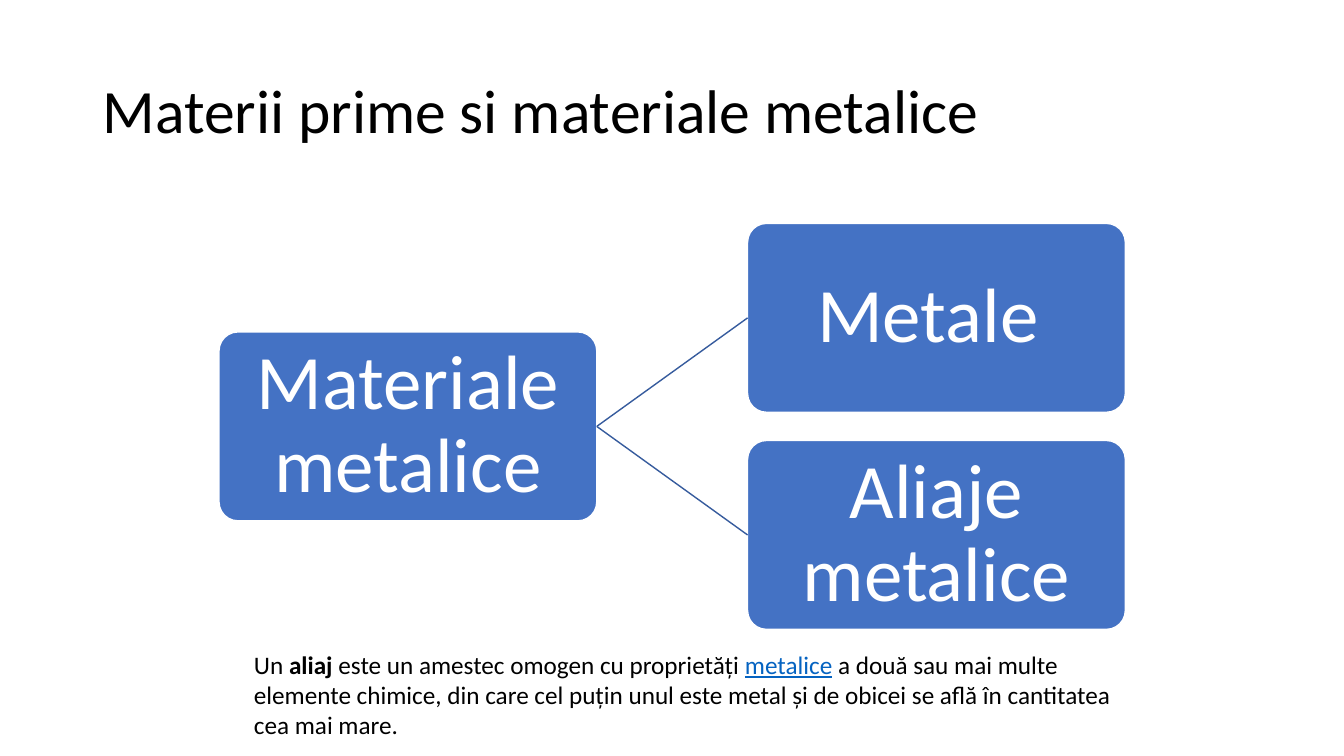
import dataclasses

import lxml.etree
import pptx
import pptx.dml.color
import pptx.enum.shapes
import pptx.enum.text
import pptx.oxml.ns
import pptx.util

Cm = pptx.util.Cm
Pt = pptx.util.Pt
ANCHOR = pptx.enum.text.MSO_ANCHOR
ALIGN = pptx.enum.text.PP_ALIGN

FONT = "Calibri"
COLORS = {
    "text": "000000",
    "box": "4472C4",
    "box_text": "FFFFFF",
    "branch": "365B9D",
    "link": "0563C1",
}

BOX_W, BOX_H = 9.52, 4.76
ROOT_LEFT, CHILD_LEFT = 5.52, 18.84
CHILD_TOP, CHILD_PITCH = 5.63, 5.47


@dataclasses.dataclass(frozen=True)
class Node:
    text: str
    left: float
    top: float


@dataclasses.dataclass(frozen=True)
class Run:
    text: str
    color: str = "text"
    bold: bool = False
    underline: bool = False


CHILDREN = [
    Node(text, CHILD_LEFT, CHILD_TOP + i * CHILD_PITCH)
    for i, text in enumerate(["Metale ", "Aliaje metalice"])
]
ROOT = Node("Materiale metalice", ROOT_LEFT, sum(n.top for n in CHILDREN) / len(CHILDREN))

DEFINITION = [
    Run("Un "),
    Run("aliaj ", bold=True),
    Run("este un amestec omogen cu proprietăți "),
    Run("metalice", color="link", underline=True),
    Run(
        " a două sau mai multe elemente chimice, din care cel puțin unul este metal "
        "și de obicei se află în cantitatea cea mai mare. "
    ),
]


def rgb(name: str) -> pptx.dml.color.RGBColor:
    return pptx.dml.color.RGBColor.from_string(COLORS[name])


def add_run(p, run: Run, size: int) -> None:
    r = p.add_run()
    r.text = run.text
    r.font.name = FONT
    r.font.size = Pt(size)
    r.font.bold = run.bold
    r.font.underline = run.underline
    r.font.color.rgb = rgb(run.color)


def format_title(s) -> None:
    sp = s.shapes.title
    sp.left, sp.top, sp.width, sp.height = Cm(2.33), Cm(1.01), Cm(29.21), Cm(3.68)
    tf = sp.text_frame
    tf.auto_size = pptx.enum.text.MSO_AUTO_SIZE.NONE
    tf.vertical_anchor = ANCHOR.MIDDLE
    p = tf.paragraphs[0]
    p.alignment = ALIGN.LEFT
    p.line_spacing = 0.9
    add_run(p, Run("Materii prime si materiale metalice"), 44)


def add_node(s, node: Node):
    sp = s.shapes.add_shape(
        pptx.enum.shapes.MSO_SHAPE.ROUNDED_RECTANGLE,
        Cm(node.left), Cm(node.top), Cm(BOX_W), Cm(BOX_H),
    )
    sp.adjustments[0] = 0.1
    sp.shadow.inherit = False
    sp.fill.solid()
    sp.fill.fore_color.rgb = rgb("box")
    sp.line.color.rgb = rgb("box_text")
    sp.line.width = Pt(1)
    tf = sp.text_frame
    tf.word_wrap = True
    tf.vertical_anchor = ANCHOR.MIDDLE
    tf.margin_left = tf.margin_right = tf.margin_top = tf.margin_bottom = Cm(0.1)
    p = tf.paragraphs[0]
    p.alignment = ALIGN.CENTER
    p.line_spacing = 0.9
    add_run(p, Run(node.text, color="box_text"), 55)
    return sp


def add_branch(s, parent, child) -> None:
    """Join the right side of parent to the left side of child."""
    line = s.shapes.add_connector(pptx.enum.shapes.MSO_CONNECTOR.STRAIGHT, 0, 0, 0, 0)
    line.begin_connect(parent, 3)
    line.end_connect(child, 1)
    line.line.color.rgb = rgb("branch")
    line.line.width = Pt(1)
    sp_pr = line._element.spPr
    lxml.etree.SubElement(sp_pr, pptx.oxml.ns.qn("a:effectLst"))


def add_definition(s) -> None:
    sp = s.shapes.add_textbox(Cm(6.15), Cm(16.23), Cm(22.66), Cm(2.57))
    tf = sp.text_frame
    tf.word_wrap = True
    p = tf.paragraphs[0]
    for run in DEFINITION:
        add_run(p, run, 18)


def main() -> None:
    prs = pptx.Presentation()
    prs.slide_width, prs.slide_height = Cm(33.87), Cm(19.05)
    s = prs.slides.add_slide(prs.slide_layouts.get_by_name("Title Only"))
    format_title(s)
    root = add_node(s, ROOT)
    for node in CHILDREN:
        add_branch(s, root, add_node(s, node))
    add_definition(s)
    prs.save("out.pptx")


if __name__ == "__main__":
    main()
